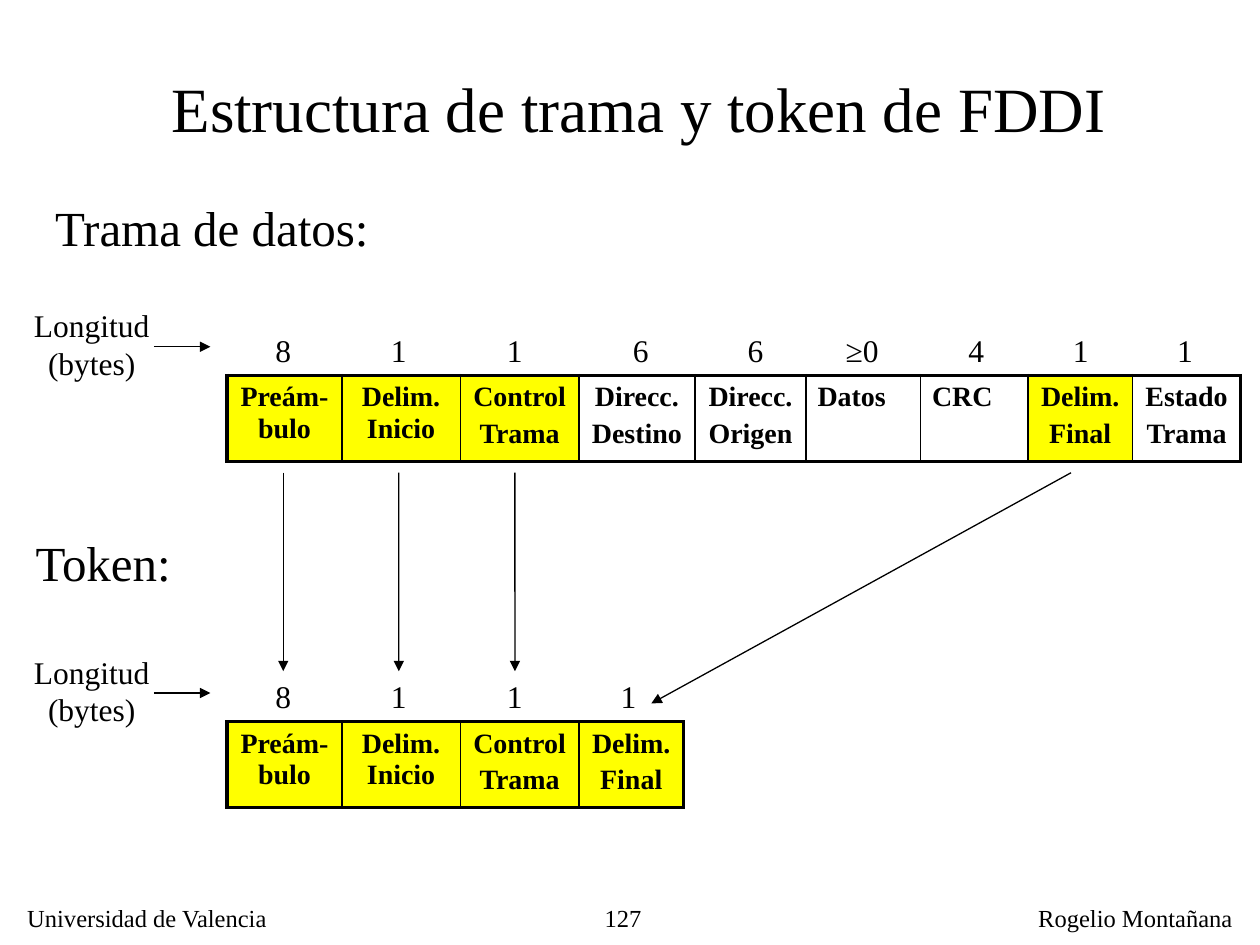
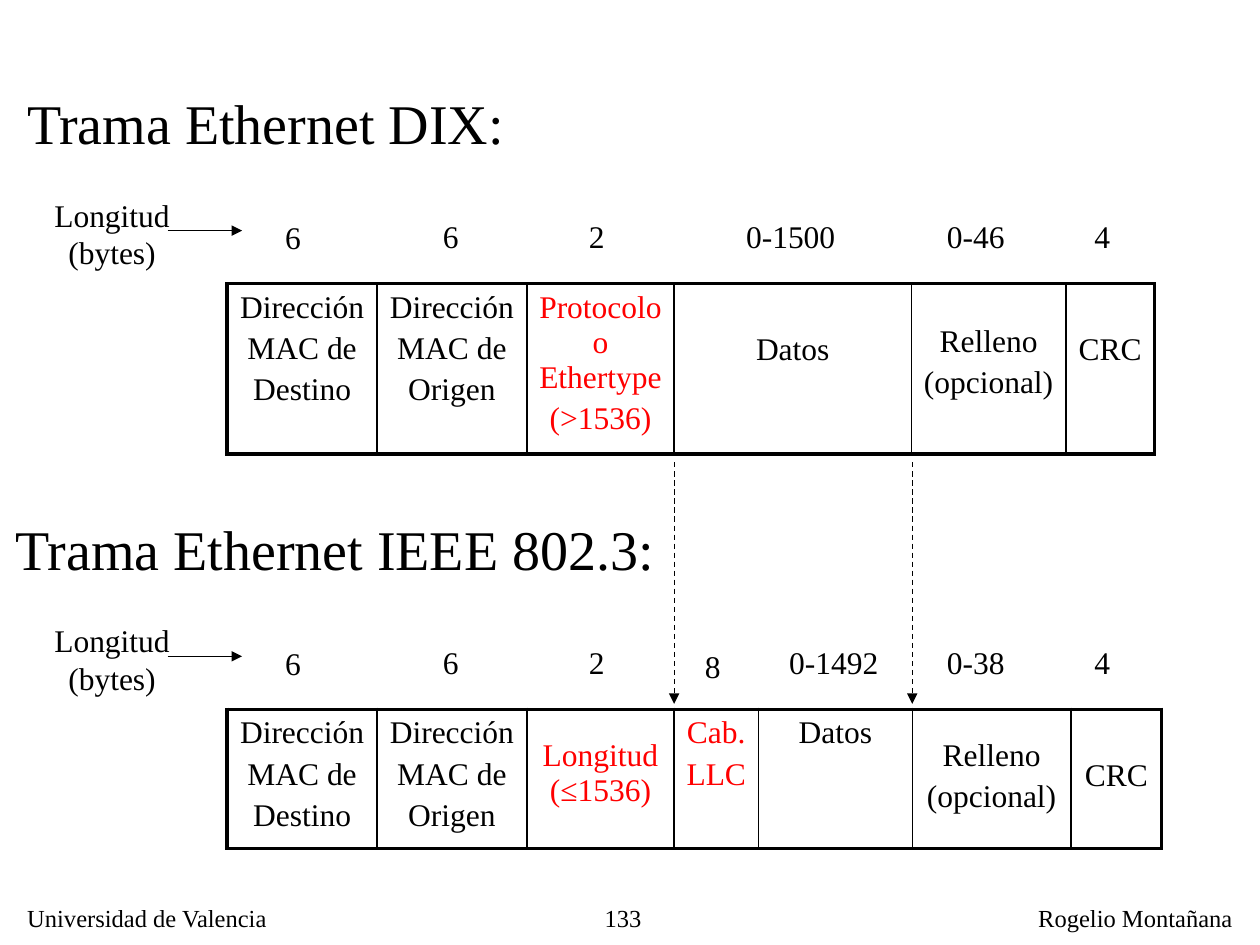
import collections
import itertools

import lxml.etree
import pptx
import pptx.dml.color
import pptx.enum.dml
import pptx.enum.shapes
import pptx.enum.text
import pptx.oxml.ns
import pptx.util

Cm, Pt = pptx.util.Cm, pptx.util.Pt
Align = pptx.enum.text.PP_ALIGN
qn = pptx.oxml.ns.qn

FONT = "Times New Roman"
BLACK, RED, YELLOW = "000000", "FF0000", "FFFF00"
TABLE_LEFT = 4.58
CELL_MARGINS = {"margin_left": Cm(0.23), "margin_right": Cm(0.23),
                "margin_bottom": Cm(0.13)}

# Lengths in cm; centre is where the byte count stands, measured from the table's left edge.
# pad lowers the cell text and drop lowers the byte count.
Field = collections.namedtuple(
    "Field", "lines width count centre fill color align pad drop",
    defaults=(None, BLACK, Align.CENTER, 0, 0))

# Offsets are measured from the table's top edge, lefts from the slide's edge.
Style = collections.namedtuple(
    "Style", "text_size bold heading_size heading_height count_rise "
             "unit_left unit_rise arrow_from arrow_to arrow_rise")
FDDI = Style(16, True, 28, 1.45, 1.02, 0.43, 1.52, 3.1, 4.24, 0.58)
ETHERNET = Style(18, False, 32, 1.6, 1.47, 0.84, 1.9, 3.38, 4.88, 1.07)

TOKEN_START = [
    Field(["Preám-bulo"], 2.31, "8", 1.13, YELLOW),
    Field(["Delim. Inicio"], 2.39, "1", 3.46, YELLOW),
    Field(["Control", "Trama"], 2.39, "1", 5.8, YELLOW),
]
END_DELIMITER = Field(["Delim.", "Final"], 2.11, "1", 17.21, YELLOW)
DATA_FRAME = TOKEN_START + [
    Field(["Direcc.", "Destino"], 2.34, "6", 8.34),
    Field(["Direcc.", "Origen"], 2.24, "6", 10.65),
    Field(["Datos"], 2.31, "≥0", 12.8, align=Align.LEFT),
    Field(["CRC"], 2.16, "4", 15.1, align=Align.LEFT),
    END_DELIMITER,
    Field(["Estado", "Trama"], 2.18, "1", 19.31),
]
TOKEN = TOKEN_START + [END_DELIMITER._replace(centre=8.09)]

ADDRESSES = [
    Field(["Dirección", "MAC de", "Destino"], 3.02, "6", 1.33, drop=0.03),
    Field(["Dirección", "MAC de", "Origen"], 3.02, "6", 4.51),
]
PADDING = Field(["Relleno", "(opcional)"], 3.12, "0-46", 15.09, pad=0.69)
CHECKSUM = Field(["CRC"], 1.78, "4", 17.64, pad=0.86)
DIX = ADDRESSES + [
    Field(["Protocolo o Ethertype", "(>1536)"], 2.97, "2", 7.45, color=RED),
    Field(["Datos"], 4.78, "0-1500", 11.36, pad=0.86),
    PADDING,
    CHECKSUM,
]
IEEE = ADDRESSES + [
    Field(["Longitud (≤1536)"], 2.97, "2", 7.45, color=RED, pad=0.45),
    Field(["Cab.", "LLC"], 1.7, "8", 9.79, color=RED, drop=0.08),
    Field(["Datos"], 3.1, "0-1492", 12.23),
    PADDING._replace(width=3.2, count="0-38", pad=0.45),
    CHECKSUM._replace(width=1.83),
]


def rgb(hex_color):
    return pptx.dml.color.RGBColor.from_string(hex_color)


def apply(target, values):
    for name, value in values.items():
        setattr(target, name, value)


def write(frame, lines, size, align=Align.CENTER, color=BLACK, bold=False, gap=0):
    """Fill a text frame with one paragraph a line, gap points apart."""
    for index, line in enumerate(lines):
        paragraph = frame.add_paragraph() if index else frame.paragraphs[0]
        paragraph.alignment = align
        paragraph.space_before = Pt(gap if index else 0)
        run = paragraph.add_run()
        run.text = line
        apply(run.font, {"name": FONT, "size": Pt(size), "bold": bold})
        run.font.color.rgb = rgb(color)


def add_label(slide, box, lines, size, align=Align.CENTER):
    label = slide.shapes.add_textbox(*map(Cm, box))
    label.text_frame.word_wrap = False
    write(label.text_frame, lines, size, align)
    return label


def add_arrow(slide, start, end, dashed=False):
    arrow = slide.shapes.add_connector(
        pptx.enum.shapes.MSO_CONNECTOR.STRAIGHT, *map(Cm, (*start, *end)))
    arrow.line.color.rgb = rgb(BLACK)
    arrow.line.width = Pt(0.75)
    if dashed:
        arrow.line.dash_style = pptx.enum.dml.MSO_LINE.DASH
    properties = arrow._element.spPr
    lxml.etree.SubElement(properties.find(qn("a:ln")), qn("a:tailEnd"), type="triangle")
    lxml.etree.SubElement(properties, qn("a:effectLst"))
    return arrow


def set_borders(cell, widths):
    for side, width in widths.items():
        edge = lxml.etree.SubElement(
            cell._tc.get_or_add_tcPr(), qn(f"a:ln{side}"), w=str(Pt(width)))
        fill = lxml.etree.SubElement(edge, qn("a:solidFill"))
        lxml.etree.SubElement(fill, qn("a:srgbClr"), val=BLACK)


def add_fields_table(slide, top, height, fields, style):
    width = sum(field.width for field in fields)
    table = slide.shapes.add_table(
        1, len(fields), Cm(TABLE_LEFT), Cm(top), Cm(width), Cm(height)).table
    apply(table, {"first_row": False, "horz_banding": False})
    last = len(fields) - 1
    for index, field in enumerate(fields):
        table.columns[index].width = Cm(field.width)
        cell = table.cell(0, index)
        apply(cell, CELL_MARGINS)
        cell.margin_top = Cm(0.13 + field.pad)
        set_borders(cell, {"L": 1 if index else 2.25,
                           "R": 2.25 if index == last else 1,
                           "T": 2.25, "B": 2.25})
        if field.fill:
            cell.fill.solid()
            cell.fill.fore_color.rgb = rgb(field.fill)
        else:
            cell.fill.background()
        write(cell.text_frame, field.lines, style.text_size, field.align,
              field.color, style.bold, gap=0.2 * style.text_size)


def add_frame(slide, heading, heading_box, top, height, fields, style):
    """Draw heading, byte counts and table; return the byte count labels.

    heading_box is left, rise above the table, and width.
    """
    left, rise, width = heading_box
    add_label(slide, (left, top - rise, width, style.heading_height),
              [heading], style.heading_size)
    add_label(slide, (style.unit_left, top - style.unit_rise, 2.84, 1.78),
              ["Longitud", "(bytes)"], 18)
    arrow_y = top - style.arrow_rise
    add_arrow(slide, (style.arrow_from, arrow_y), (style.arrow_to, arrow_y))
    add_fields_table(slide, top, height, fields, style)
    counts = []
    for field in fields:
        count_width = 0.6 + 0.35 * len(field.count)
        count_left = TABLE_LEFT + field.centre - count_width / 2
        count_top = top - style.count_rise + field.drop
        counts.append(add_label(
            slide, (count_left, count_top, count_width, 1.02), [field.count], 18))
    return counts


def add_footer(slide, number):
    add_label(slide, (10.49, 18.08, 2.69, 0.8), [number], 14, Align.RIGHT)
    add_label(slide, (0.3, 18.08, 5.41, 0.84), ["Universidad de Valencia"], 14, Align.LEFT)
    add_label(slide, (20.68, 18.08, 4.42, 0.84), ["Rogelio Montañana"], 14, Align.LEFT)


def add_title(slide, text):
    title = slide.shapes.title
    apply(title, {"left": Cm(3.2), "top": Cm(1.27), "width": Cm(19.35), "height": Cm(1.78)})
    apply(title.text_frame, {"word_wrap": False,
                             "vertical_anchor": pptx.enum.text.MSO_ANCHOR.TOP,
                             "auto_size": pptx.enum.text.MSO_AUTO_SIZE.NONE})
    write(title.text_frame, [text], 36)


def build_fddi(deck):
    slide = deck.slides.add_slide(deck.slide_layouts.get_by_name("Title Only"))
    add_title(slide, "Estructura de trama y token de FDDI")
    add_footer(slide, "127")
    add_frame(slide, "Trama de datos:", (0.84, 3.71, 6.86), 7.57, 1.71, DATA_FRAME, FDDI)
    counts = add_frame(slide, "Token:", (0.43, 3.94, 3.3), 14.55, 1.71, TOKEN, FDDI)
    for field, count in zip(TOKEN_START, counts):
        x = TABLE_LEFT + field.centre
        add_arrow(slide, (x, 9.53), (x, 13.53)).end_connect(count, 0)
    add_arrow(slide, (21.59, 9.53), (13.13, 14.18))


def build_ethernet(deck):
    slide = deck.slides.add_slide(deck.slide_layouts.get_by_name("Blank"))
    add_footer(slide, "133")
    add_frame(slide, "Trama Ethernet DIX:", (0.28, 4.06, 10.16), 5.72, 3.42, DIX, ETHERNET)
    add_frame(slide, "Trama Ethernet IEEE 802.3:", (0.05, 4.06, 13.41), 14.3, 2.8,
              IEEE, ETHERNET)
    edges = list(itertools.accumulate(field.width for field in IEEE))
    for edge in (edges[2], edges[4]):
        x = TABLE_LEFT + edge
        add_arrow(slide, (x, 9.32), (x, 14.19), dashed=True)


def main():
    deck = pptx.Presentation()
    apply(deck, {"slide_width": Cm(25.4), "slide_height": Cm(19.05)})
    build_fddi(deck)
    build_ethernet(deck)
    deck.save("out.pptx")


if __name__ == "__main__":
    main()
